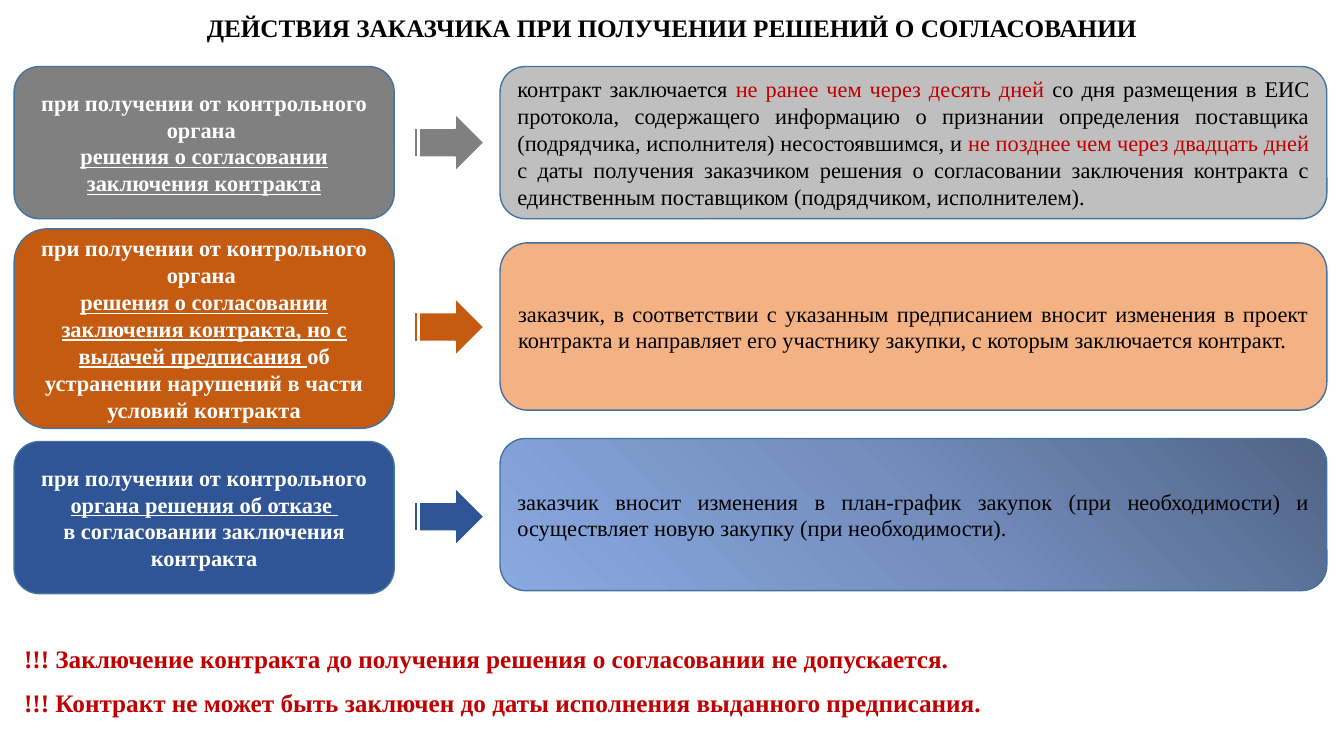
import pptx
import pptx.util
import pptx.dml.color
import pptx.enum.shapes
import pptx.enum.text
import pptx.oxml
import pptx.oxml.ns

Inches = pptx.util.Inches
Pt = pptx.util.Pt
SHAPES = pptx.enum.shapes.MSO_SHAPE
ALIGN = pptx.enum.text.PP_ALIGN
MIDDLE = pptx.enum.text.MSO_ANCHOR.MIDDLE
RED = "C00000"


def rgb(value):
    return pptx.dml.color.RGBColor.from_string(value)


def write(frame, paragraphs, size, bold, align):
    frame.word_wrap = True
    for index, pieces in enumerate(paragraphs):
        paragraph = frame.paragraphs[0] if index == 0 else frame.add_paragraph()
        paragraph.alignment = align
        for text, color, underline in pieces:
            run = paragraph.add_run()
            run.text = text
            run.font.name = "Times New Roman"
            run.font.size = Pt(size)
            run.font.bold = bold
            run.font.underline = underline
            run.font.color.rgb = rgb(color)


presentation = pptx.Presentation()
presentation.slide_width = Inches(13.33)
presentation.slide_height = Inches(7.5)
slide = presentation.slides.add_slide(presentation.slide_layouts[5])

title = slide.shapes.title
title.left, title.top = Inches(0), Inches(0)
title.width, title.height = Inches(13.33), Inches(0.54)
title.text_frame.vertical_anchor = MIDDLE
title.text_frame.auto_size = pptx.enum.text.MSO_AUTO_SIZE.NONE
heading = "ДЕЙСТВИЯ ЗАКАЗЧИКА ПРИ ПОЛУЧЕНИИ РЕШЕНИЙ О СОГЛАСОВАНИИ"
write(title.text_frame, [[(heading, "000000", False)]], 18, True, ALIGN.CENTER)

WHITE, BLACK = "FFFFFF", "000000"
decisions = [
    {
        "color": "808080", "action_color": "BFBFBF",
        "decision_at": (0.66, 1.51), "arrow_top": 1.13, "action_at": (0.66, 1.51),
        "decision": [
            [("при получении от контрольного органа ", WHITE, False)],
            [("решения о согласовании заключения контракта", WHITE, True)],
        ],
        "action": [
            ("контракт заключается ", BLACK, False),
            ("не ранее чем через десять дней ", RED, False),
            ("со дня размещения в ЕИС протокола, содержащего информацию о признании "
             "определения поставщика (подрядчика, исполнителя) несостоявшимся, и ", BLACK, False),
            ("не позднее чем через двадцать дней ", RED, False),
            ("с даты получения заказчиком решения о согласовании заключения контракта "
             "с единственным поставщиком (подрядчиком, исполнителем). ", BLACK, False),
        ],
    },
    {
        "color": "C55A11", "action_color": "F4B183",
        "decision_at": (2.27, 1.98), "arrow_top": 2.96, "action_at": (2.41, 1.66),
        "decision": [
            [("при получении от контрольного органа ", WHITE, False)],
            [("решения о согласовании заключения контракта, но с выдачей предписания ", WHITE, True),
             ("об устранении нарушений в части условий контракта", WHITE, False)],
        ],
        "action": [
            ("заказчик, в соответствии с указанным предписанием вносит изменения в проект "
             "контракта и направляет его участнику закупки, с которым заключается контракт. ",
             BLACK, False),
        ],
    },
    {
        "color": "2F5597", "action_color": "89A9E1",
        "decision_at": (4.38, 1.51), "arrow_top": 4.84, "action_at": (4.35, 1.51),
        "decision": [
            [("при получении от контрольного ", WHITE, False),
             ("органа решения об отказе ", WHITE, True)],
            [("в согласовании заключения контракта", WHITE, False)],
        ],
        "action": [
            ("заказчик вносит изменения в план-график закупок (при необходимости) "
             "и осуществляет новую закупку (при необходимости).", BLACK, False),
        ],
    },
]

for row in decisions:
    parts = [
        (SHAPES.ROUNDED_RECTANGLE, 0.14, 3.77, row["decision_at"], row["color"], "43739E",
         row["decision"], True, ALIGN.CENTER),
        (SHAPES.STRIPED_RIGHT_ARROW, 4.07, 0.73, (row["arrow_top"], 0.57), row["color"], WHITE,
         [], False, ALIGN.CENTER),
        (SHAPES.ROUNDED_RECTANGLE, 4.96, 8.2, row["action_at"], row["action_color"], "43739E",
         [row["action"]], False, ALIGN.JUSTIFY),
    ]
    for kind, left, width, (top, height), fill, line, paragraphs, bold, align in parts:
        part = slide.shapes.add_shape(kind, Inches(left), Inches(top), Inches(width), Inches(height))
        part.shadow.inherit = False
        part.fill.solid()
        part.fill.fore_color.rgb = rgb(fill)
        part.line.color.rgb = rgb(line)
        part.line.width = Pt(1)
        part.text_frame.vertical_anchor = MIDDLE
        write(part.text_frame, paragraphs, 16, bold, align)

refusal_action = part
refusal_action.fill.gradient()
plain_gradient = refusal_action.element.spPr.find(pptx.oxml.ns.qn("a:gradFill"))
stops = "".join(
    f'<a:gs pos="{position * 1000}"><a:srgbClr val="{color}"/></a:gs>'
    for position, color in [(0, "516486"), (50, "748EBE"), (100, "89A9E1")]
)
corner_gradient = pptx.oxml.parse_xml(
    f'<a:gradFill {pptx.oxml.ns.nsdecls("a")} rotWithShape="1"><a:gsLst>{stops}</a:gsLst>'
    '<a:path path="circle"><a:fillToRect l="100000" b="100000"/></a:path></a:gradFill>'
)
plain_gradient.getparent().replace(plain_gradient, corner_gradient)

warnings = slide.shapes.add_textbox(Inches(0.14), Inches(6.33), Inches(13.16), Inches(0.84))
write(warnings.text_frame, [
    [("!!! Заключение контракта до получения решения о согласовании не допускается.", RED, False)],
    [("!!! Контракт не может быть заключен до даты исполнения выданного предписания.", RED, False)],
], 18, True, ALIGN.JUSTIFY)
warnings.text_frame.paragraphs[1].space_before = Pt(10)

presentation.save("out.pptx")
